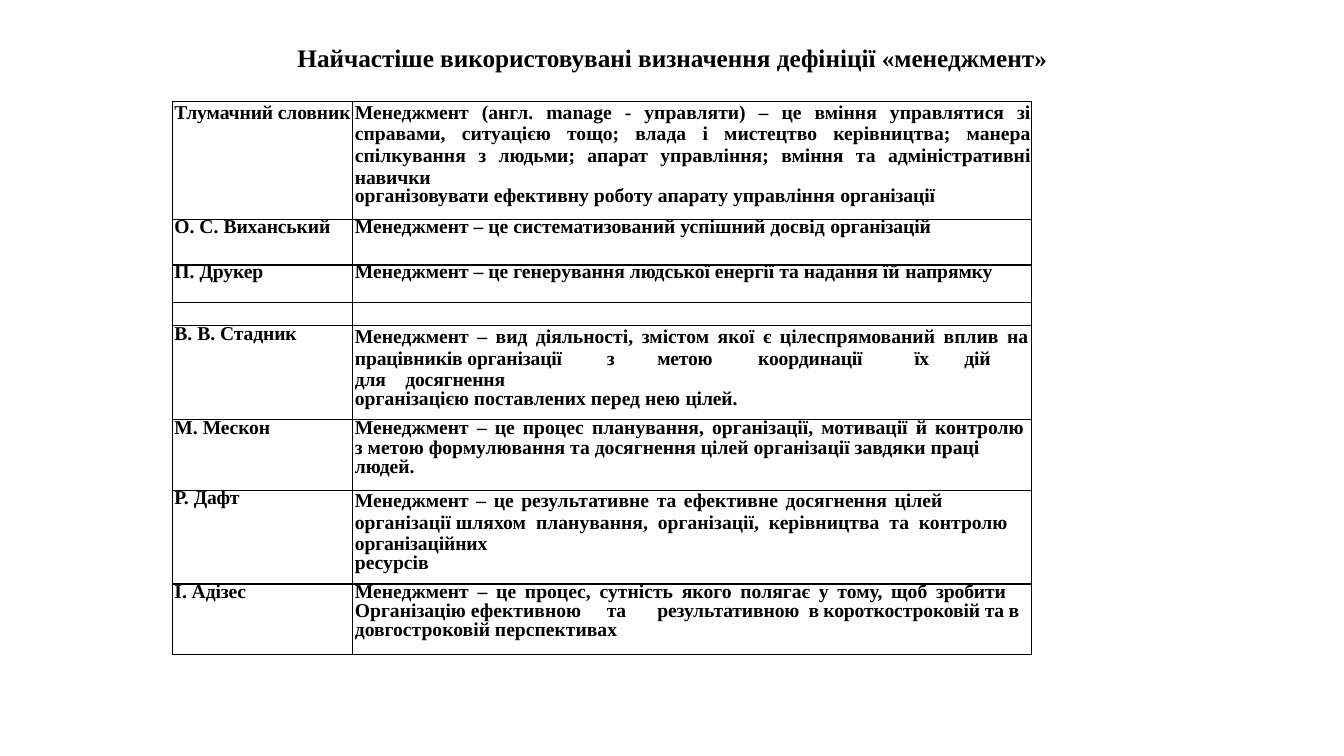
import pptx
import pptx.dml.color
import pptx.enum.text
import pptx.util
import lxml.etree
from pptx.oxml.ns import qn

Inches, Pt = pptx.util.Inches, pptx.util.Pt
ALIGN = pptx.enum.text.PP_ALIGN
FONT = {"name": "Times New Roman", "bold": True}
INK = "000000"
COLS = [1.79, 6.73]
ROWS = [1.17, 0.45, 0.37, 0.21, 0.93, 0.7, 0.93, 0.7]


def par(*runs, ls=None, al=None, tabs=()):
    """Describe a paragraph; a run is text, letter spacing and optional word gap."""
    return {"runs": runs, "ls": ls, "al": al, "tabs": tabs}


DEFINITIONS = [
    ([par(("Тлумачний словник", -0.1))],
     [par(("Менеджмент (англ. manage - управляти) – це вміння управлятися зі справами, "
           "ситуацією тощо; влада і мистецтво керівництва; манера спілкування з людьми; "
           "апарат управління; вміння та адміністративні ", 0), ("навички", -0.1),
          al=ALIGN.JUSTIFY),
      par(("організовувати ефективну роботу апарату управління ", 0),
          ("організації", -0.1), ls=13.1, al=ALIGN.JUSTIFY)]),
    ([par(("О. С. ", 0), ("Виханський", -0.1), ls=12.8)],
     [par(("Менеджмент – це систематизований успішний досвід", 0),
          (" організацій", -0.1), ls=12.8)]),
    ([par(("П. ", 0), ("Друкер", -0.1), ls=12.8)],
     [par(("Менеджмент – це генерування людської енергії та надання їй ", 0),
          ("напрямку", -0.1), ls=12.8)]),
    ([par()], [par()]),
    ([par(("В. В.", 0), (" Стадник", -0.1), ls=13.5)],
     [par(("Менеджмент – вид діяльності, змістом якої є цілеспрямований вплив на ", 0, 2.5),
          ("працівників організації\t", -0.1), ("з\t", -0.5), ("метою\t", -0.2),
          ("координації\t ", -0.1), ("їх\t дій\tдля\t", -0.2), ("досягнення", -0.1),
          tabs=[1.02, 1.93, 2.15, 2.76, 3.76, 4.04, 4.41, 4.8]),
      par(("організацією поставлених перед нею ", 0), ("цілей.", -0.1), ls=13.1)]),
    ([par(("М. ", 0), ("Мескон", -0.1), ls=13.7)],
     [par(("Менеджмент – це процес планування, організації, мотивації й контролю ", 0, 2.2),
          ("з метою формулювання та досягнення цілей організації завдяки праці людей.", 0),
          ls=13.8)]),
    ([par(("Р. ", 0), ("Дафт", -0.2), ls=13.5)],
     [par(("Менеджмент – це результативне та ефективне досягнення цілей ", 0, 1.8),
          ("організації ", 0), ("шляхом планування, організації, керівництва та контролю ", 0, 3.5),
          ("організаційних", -0.1)),
      par(("ресурсів", 0), ls=13.1)]),
    ([par(("І.", 0), (" Адізес", -0.1), ls=13.5)],
     [par(("Менеджмент – це процес, сутність якого полягає у тому, щоб ", 0, 2.7),
          ("зробити", -0.1), ls=13.5),
      par(("Організацію ефективною\t", 0), ("та\t", -0.3), ("результативною\t", -0.1),
          ("в ", -0.5), ("короткостроковій ", -0.1), ("та ", -0.3), ("в ", -0.5),
          ("довгостроковій перспективах", 0), ls=13.5,
          tabs=[1.01, 2.03, 2.32, 3.61, 3.84, 5.24, 5.53])]),
]


def rgb(color):
    """Turn a hex string into a colour."""
    return pptx.dml.color.RGBColor.from_string(color)


def set_attrs(obj, values):
    """Set attributes from a dict."""
    for key, value in values.items():
        setattr(obj, key, value)


def add_run(p, text, size, spc=0):
    """Add one formatted run with letter spacing in points."""
    r = p.add_run()
    r.text = text
    set_attrs(r.font, {**FONT, "size": Pt(size)})
    r.font.color.rgb = rgb(INK)
    if spc:
        r.font._element.set("spc", str(round(spc * 100)))


def add_spaced(p, text, spc, gap=None):
    """Add text, widening the spaces between words when a gap is given."""
    if gap is None:
        add_run(p, text, 14, spc)
        return
    for word in text.split():
        add_run(p, word, 14, spc)
        add_run(p, " ", 14, gap)


def fill_paragraph(p, data):
    """Fill a table paragraph with its runs, line spacing and tabs."""
    set_attrs(p, {"alignment": data["al"],
                  "line_spacing": Pt(data["ls"]) if data["ls"] else None})
    pPr = p._p.get_or_add_pPr()
    pPr.set("marL", str(Inches(0.02)))
    pPr.set("indent", "0")
    if data["tabs"]:
        tabs = lxml.etree.SubElement(pPr, qn("a:tabLst"))
        for pos in data["tabs"]:
            lxml.etree.SubElement(tabs, qn("a:tab"), pos=str(Inches(pos)), algn="l")
    for run in data["runs"]:
        add_spaced(p, *run)
    if not data["runs"]:
        lxml.etree.SubElement(p._p, qn("a:endParaRPr"), sz="1400")


def add_borders(cell):
    """Draw a thin line on all sides of a cell."""
    tcPr = cell._tc.get_or_add_tcPr()
    for i, side in enumerate(("lnL", "lnR", "lnT", "lnB")):
        ln = lxml.etree.Element(qn("a:" + side), w=str(Pt(1)))
        fill = lxml.etree.SubElement(ln, qn("a:solidFill"))
        lxml.etree.SubElement(fill, qn("a:srgbClr"), val=INK)
        tcPr.insert(i, ln)


def fill_cell(cell, paragraphs):
    """Fill one table cell."""
    set_attrs(cell, {"margin_" + side: 0 for side in ("left", "right", "top", "bottom")})
    cell.fill.background()
    add_borders(cell)
    tf = cell.text_frame
    for i, data in enumerate(paragraphs):
        fill_paragraph(tf.add_paragraph() if i else tf.paragraphs[0], data)


def add_title(s, x, y, w, h):
    """Place the slide heading."""
    tf = s.shapes.add_textbox(Inches(x), Inches(y), Inches(w), Inches(h)).text_frame
    set_attrs(tf, {"word_wrap": True, "vertical_anchor": pptx.enum.text.MSO_ANCHOR.MIDDLE})
    p = tf.paragraphs[0]
    set_attrs(p, {"alignment": ALIGN.CENTER, "line_spacing": 0.9})
    add_run(p, "Найчастіше використовувані визначення дефініції «менеджмент»", 18)


def add_definitions(s, x, y):
    """Place the table of authors and definitions."""
    table = s.shapes.add_table(len(ROWS), len(COLS), Inches(x), Inches(y),
                               Inches(sum(COLS)), Inches(sum(ROWS))).table
    set_attrs(table, {"first_row": False, "horz_banding": False})
    for col, width in zip(table.columns, COLS):
        col.width = Inches(width)
    for row, height, texts in zip(table.rows, ROWS, DEFINITIONS):
        row.height = Inches(height)
        for cell, paragraphs in zip(row.cells, texts):
            fill_cell(cell, paragraphs)


def main():
    """Build the slide and save it."""
    prs = pptx.Presentation()
    set_attrs(prs, {"slide_width": Inches(13.33), "slide_height": Inches(7.5)})
    s = prs.slides.add_slide(prs.slide_layouts[6])
    add_title(s, 0.92, 0.4, 11.5, 0.38)
    add_definitions(s, 1.71, 1.01)
    prs.save("out.pptx")


if __name__ == "__main__":
    main()
